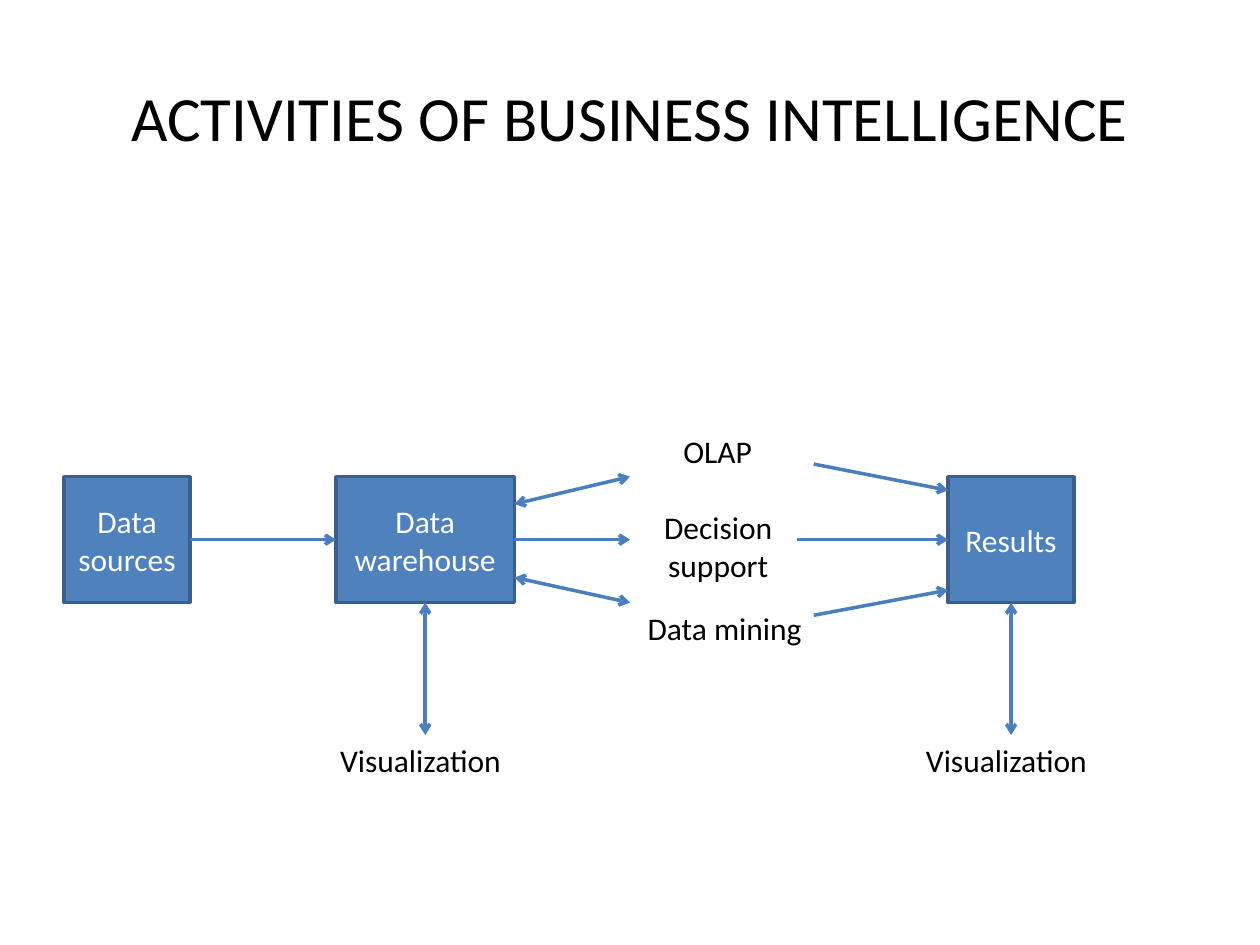
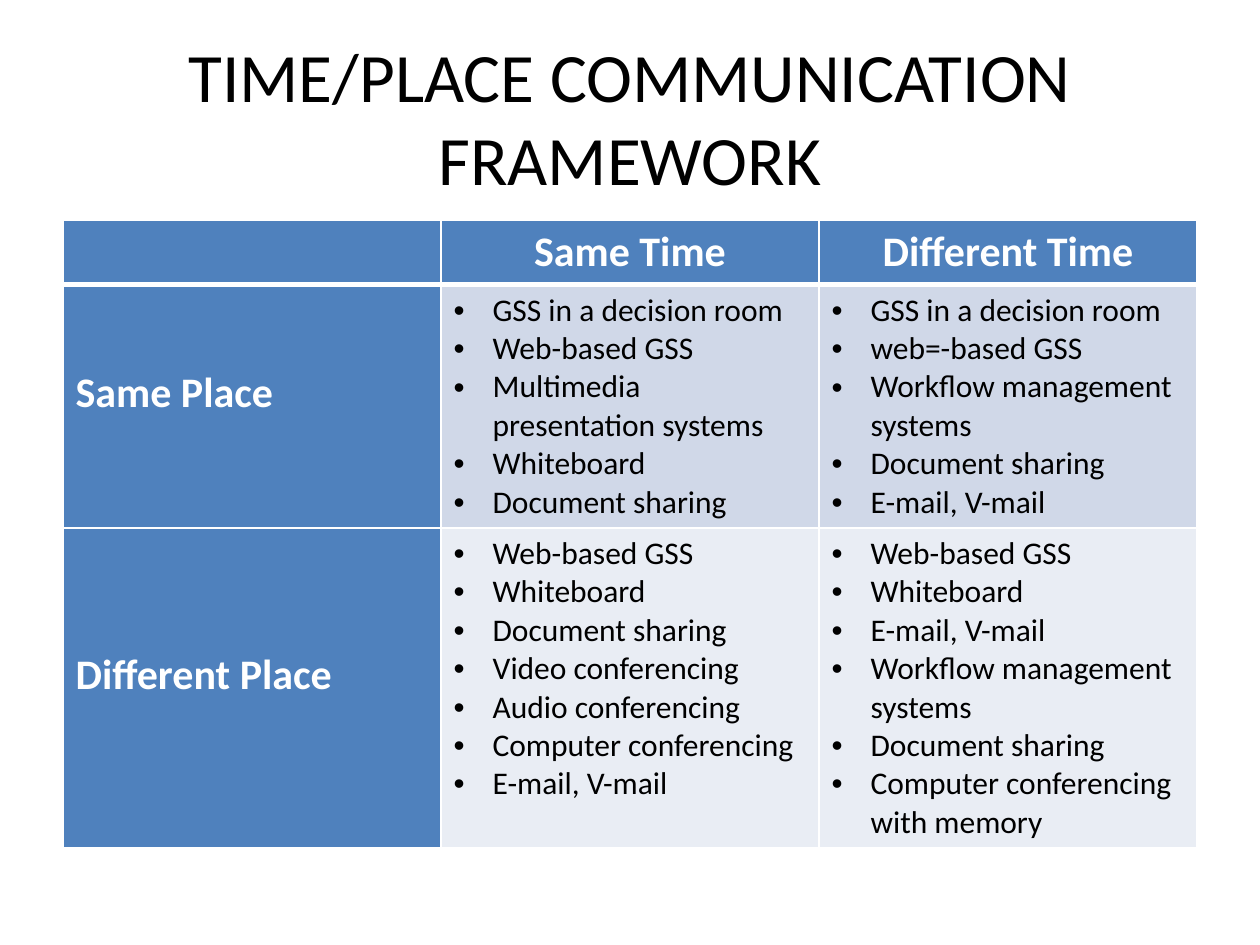
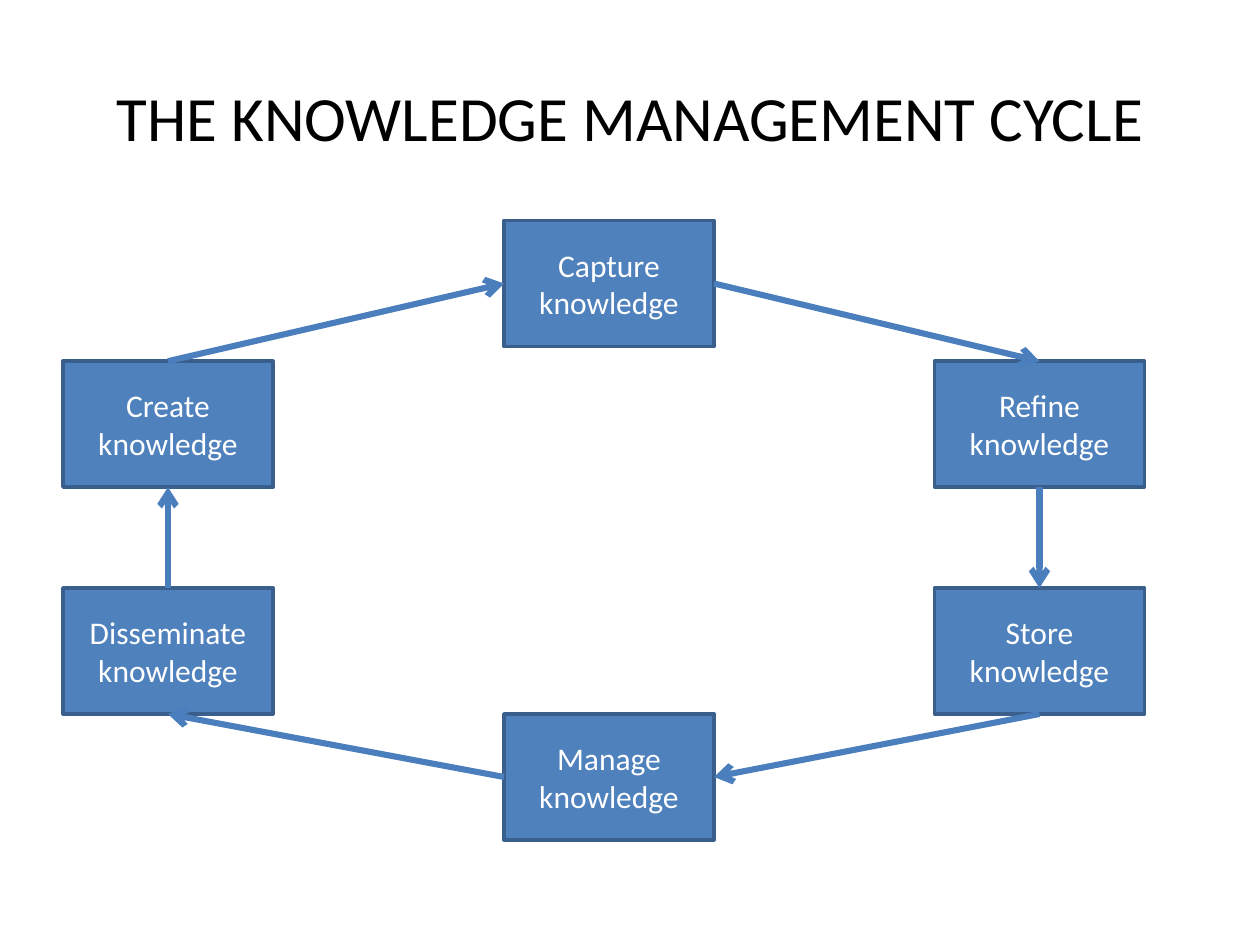
from lxml import etree
from pptx import Presentation
from pptx.dml import color
from pptx.enum import shapes, text
from pptx.oxml import ns
from pptx.util import Inches, Pt

# Shared look: a 120 x 90 grid of cells, one font, a few colours
WIDE, HIGH = 10, 7.5
CELL = WIDE / 120
FONT = "Calibri"
BLUE, EDGE, WIRE = "4F81BD", "3A5F8C", "4B7EBC"
PALE, LIGHT = "D0D8E8", "E9EDF4"
BLACK, WHITE = "000000", "FFFFFF"
TOP, LEFT, BOTTOM, RIGHT = range(4)
MID = text.PP_ALIGN.CENTER


def rgb(code):
    return color.RGBColor.from_string(code)


def grid(box, *cells):
    """Turn column and row (and width and height) inside a box into lengths."""
    shift = (box[0], box[1], 0, 0)
    return [Inches((c + s) * CELL) for c, s in zip(cells, shift)]


def sub(node, tag, **attrs):
    return etree.SubElement(node, ns.qn(tag), attrs)


def style(para, size, code, align=None, bold=False):
    para.alignment = align
    font = para.font
    font.name, font.size, font.bold = FONT, Pt(size), bold
    font.color.rgb = rgb(code)


def write(frame, words, size, code, align=None, bold=False):
    frame.text = words
    for para in frame.paragraphs:
        style(para, size, code, align, bold)


def page(deck, words, size=36):
    slide = deck.slides.add_slide(deck.slide_layouts[6])
    frame = slide.shapes.add_textbox(*grid((6, 3.6), 0, 0, 108, 15)).text_frame
    frame.word_wrap = True
    frame.vertical_anchor = text.MSO_ANCHOR.MIDDLE
    write(frame, words, size, BLACK, MID)
    return slide


def block(slide, box, words, *cells):
    rect = slide.shapes.add_shape(shapes.MSO_SHAPE.RECTANGLE, *grid(box, *cells))
    rect.shadow.inherit = False
    rect.fill.solid()
    rect.fill.fore_color.rgb = rgb(BLUE)
    rect.line.color.rgb = rgb(EDGE)
    rect.line.width = Pt(2)
    rect.text_frame.vertical_anchor = text.MSO_ANCHOR.MIDDLE
    write(rect.text_frame, words, 18, WHITE, MID)
    return rect


def label(slide, box, words, *cells, align=None):
    frame = slide.shapes.add_textbox(*grid(box, *cells)).text_frame
    frame.word_wrap = False
    frame.auto_size = text.MSO_AUTO_SIZE.SHAPE_TO_FIT_TEXT
    write(frame, words, 18, BLACK, align)


def arrow(slide, box, start, end, width=2, both=False):
    """Each end is (column, row) in the box, or (rectangle, side)."""
    ends = [(0, 0) if hasattr(e[0], "text_frame") else e for e in (start, end)]
    link = slide.shapes.add_connector(
        shapes.MSO_CONNECTOR.STRAIGHT, *grid(box, *ends[0]), *grid(box, *ends[1]))
    for spot, join in ((start, link.begin_connect), (end, link.end_connect)):
        if hasattr(spot[0], "text_frame"):
            join(*spot)
    link.line.color.rgb = rgb(WIRE)
    link.line.width = Pt(width)
    line = link.line._get_or_add_ln()
    if both:
        sub(line, "a:headEnd", type="arrow")
    sub(line, "a:tailEnd", type="arrow")
    sub(link._element.spPr, "a:effectLst")


def flow(slide, box):
    # Main stages
    source = block(slide, box, "Data sources", 0, 6, 12, 12)
    store = block(slide, box, "Data warehouse", 25.9, 6, 17, 12)
    result = block(slide, box, "Results", 84.2, 6, 12, 12)

    # Analysis methods and outputs
    label(slide, box, "OLAP", 57.8, 1.2, 9, 4.8)
    label(slide, box, "Decision\nsupport", 55.9, 8.4, 12.8, 8.5, align=MID)
    label(slide, box, "Data mining", 54.4, 18, 17.3, 4.8)
    for stage, col in ((store, 34.4), (result, 90.2)):
        label(slide, box, "Visualization", col - 9.3, 30.6, 18.6, 4.8)
        arrow(slide, box, (stage, BOTTOM), (col, 30.6), both=True)

    # Links between stages
    arrow(slide, box, (source, RIGHT), (store, LEFT))
    arrow(slide, box, (store, RIGHT), (53.9, 12))
    arrow(slide, box, (69.8, 12), (result, LEFT))
    for near, far in ((8.6, 6), (15.6, 18)):
        arrow(slide, box, (42.9, near), (53.9, far), both=True)
    for near, far in ((4.8, 7.3), (19.2, 16.8)):
        arrow(slide, box, (71.4, near), (84.2, far))


def border(cell, row):
    props = cell._tc.get_or_add_tcPr()
    thick = {"T": row == 1, "B": row == 0}
    for side in "LRTB":
        width = Pt(3 if thick.get(side) else 1)
        line = sub(props, f"a:ln{side}", w=str(width))
        sub(sub(line, "a:solidFill"), "a:srgbClr", val=WHITE)


def paint(cell, row, code):
    border(cell, row)
    cell.fill.solid()
    cell.fill.fore_color.rgb = rgb(code)


def items(frame, words):
    frame.text = "\n".join(words)
    for para in frame.paragraphs:
        props = para._p.get_or_add_pPr()
        indent = Inches(0.31)
        props.set("marL", str(indent))
        props.set("indent", str(-indent))
        sub(props, "a:buFont", typeface="Arial")
        sub(props, "a:buChar", char="•")
        style(para, 18, BLACK)


def matrix(slide, box, heads, rows, highs):
    table = slide.shapes.add_table(
        len(highs), 3, *grid(box, 0, 0, 108, sum(highs) / CELL)).table
    table.horz_banding = False
    for row, high in zip(table.rows, highs):
        row.height = Inches(high)

    # Header row
    for col, head in enumerate(heads):
        cell = table.cell(0, col)
        paint(cell, 0, BLUE)
        write(cell.text_frame, head, 24, WHITE, MID, True)

    # Places with their tools
    for num, (place, drop, code, *lists) in enumerate(rows, 1):
        cell = table.cell(num, 0)
        paint(cell, num, BLUE)
        cell.margin_top = Inches(drop)
        write(cell.text_frame, place, 24, WHITE, bold=True)
        for col, words in enumerate(lists, 1):
            cell = table.cell(num, col)
            paint(cell, num, code)
            items(cell.text_frame, words)


def cycle(slide, box, steps):
    """Each step is name, column, row, side it leaves by, side it is entered by."""
    rects = [block(slide, box, f"{name}\nknowledge", col, row, 20, 12)
             for name, col, row, *_ in steps]
    for num, step in enumerate(steps):
        after = (num + 1) % len(steps)
        arrow(slide, box, (rects[num], step[3]), (rects[after], steps[after][4]), 3.5)


PLACES = [
    ("Same Place", 0.66, PALE,
     ["GSS in a decision room", "Web-based GSS", "Multimedia presentation systems",
      "Whiteboard", "Document sharing"],
     ["GSS in a decision room", "web=-based GSS", "Workflow management systems",
      "Document sharing", "E-mail, V-mail"]),
    ("Different Place", 0.97, LIGHT,
     ["Web-based GSS", "Whiteboard", "Document sharing", "Video conferencing",
      "Audio conferencing", "Computer conferencing", "E-mail, V-mail"],
     ["Web-based GSS", "Whiteboard", "E-mail, V-mail", "Workflow management systems",
      "Document sharing", "Computer conferencing with memory"]),
]

STEPS = [
    ("Create", 0, 13.4, TOP, BOTTOM),
    ("Capture", 42, 0, RIGHT, LEFT),
    ("Refine", 83, 13.4, BOTTOM, TOP),
    ("Store", 83, 35, BOTTOM, TOP),
    ("Manage", 42, 47, LEFT, RIGHT),
    ("Disseminate", 0, 35, TOP, BOTTOM),
]


def main():
    deck = Presentation()
    deck.slide_width, deck.slide_height = Inches(WIDE), Inches(HIGH)
    flow(page(deck, "ACTIVITIES OF BUSINESS INTELLIGENCE"), (6.1, 39.4))
    matrix(page(deck, "TIME/PLACE COMMUNICATION FRAMEWORK", 39.6), (6, 21),
           ["", "Same Time", "Different Time"], PLACES, [0.51, 1.93, 2.54])
    cycle(page(deck, "THE KNOWLEDGE MANAGEMENT CYCLE"), (6, 21), STEPS)
    deck.save("out.pptx")


if __name__ == "__main__":
    main()
